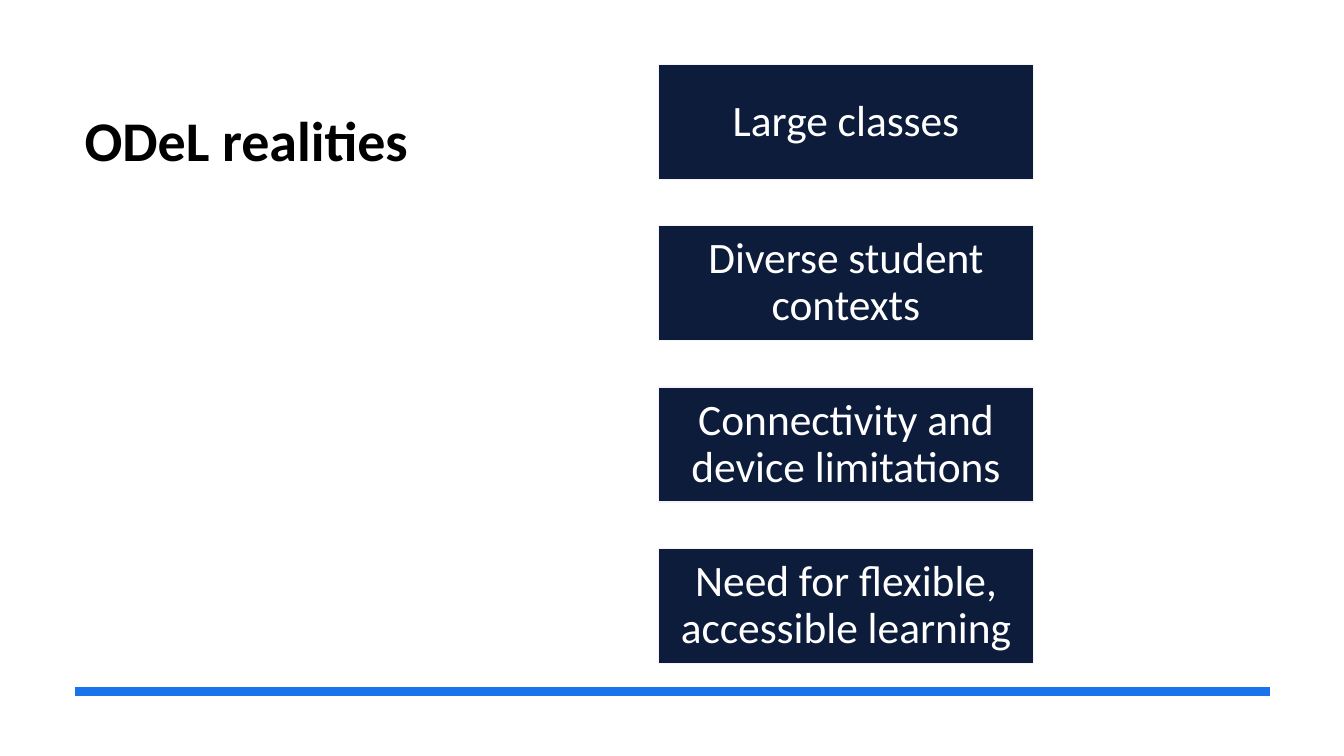
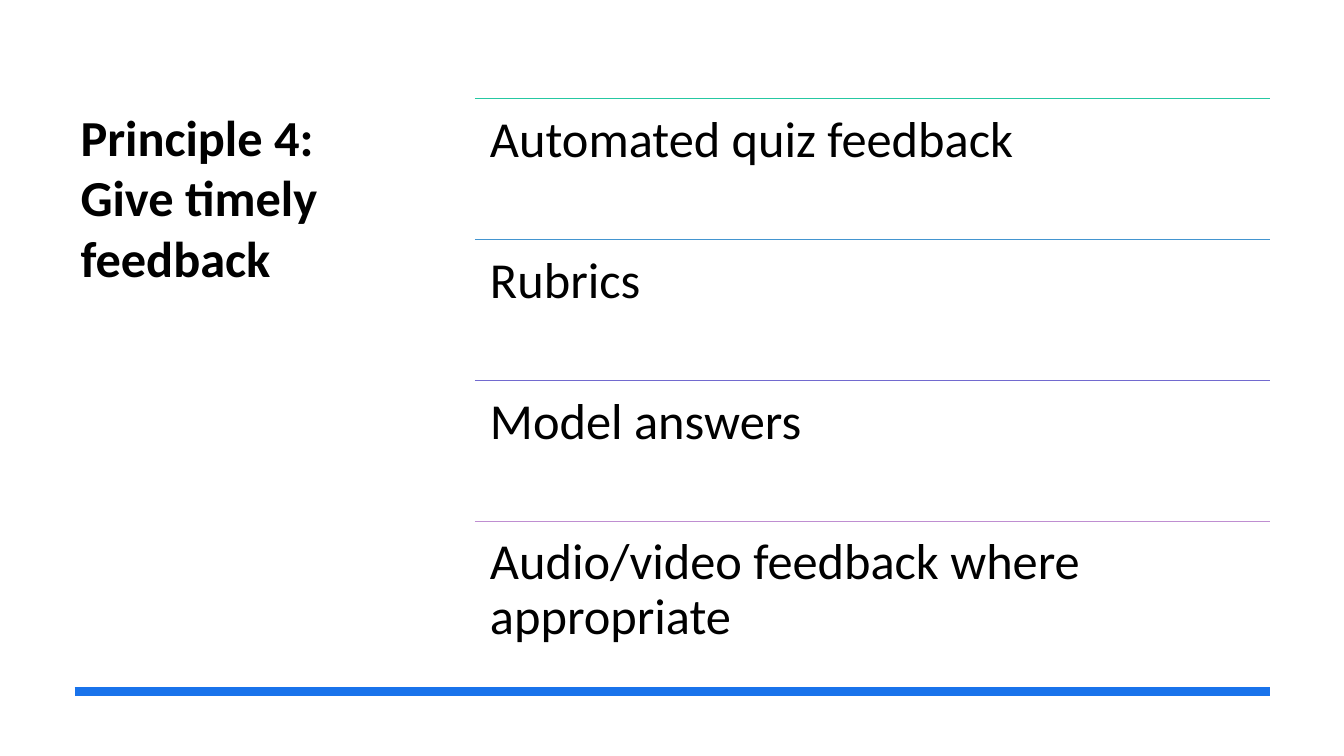
from lxml.etree import SubElement
from pptx import Presentation
from pptx.dml.color import RGBColor
from pptx.enum.shapes import MSO_CONNECTOR as CONN, MSO_SHAPE as SHAPE
from pptx.enum.text import MSO_ANCHOR as ANCHOR, PP_ALIGN as ALIGN
from pptx.oxml.ns import qn
from pptx.util import Inches, Pt

FONT = "Calibri"
COLORS = {
    "text": "000000", "white": "FFFFFF", "footer": "1973EB",
    "box": "0D1C3B", "box_edge": "F5F2F9",
    "green": "25C8A2", "blue": "4395D0", "violet": "726ACF", "mauve": "BF8ED1",
}
LEFT, RIGHT = 0.74, 12.6  # shared slide margins


def rgb(name):
    return RGBColor.from_string(COLORS[name])


def write(shape, text, size=36, color="text", bold=False, align=ALIGN.LEFT,
          anchor=ANCHOR.TOP, inset=(0.1, 0.05), spacing=1.0):
    """Fill a shape with one formatted paragraph."""
    tf = shape.text_frame
    tf.word_wrap = True
    tf.vertical_anchor = anchor
    tf.margin_left = tf.margin_right = Inches(inset[0])
    tf.margin_top = tf.margin_bottom = Inches(inset[1])
    p = tf.paragraphs[0]
    p.alignment, p.line_spacing = align, spacing
    r = p.add_run()
    r.text = text
    r.font.name, r.font.size, r.font.bold = FONT, Pt(size), bold
    r.font.color.rgb = rgb(color)


def add_text(s, box, text, **fmt):
    write(s.shapes.add_textbox(*map(Inches, box)), text, **fmt)


def add_rule(s, x1, x2, y, color, width):
    """Draw a horizontal line without a shadow."""
    line = s.shapes.add_connector(CONN.STRAIGHT, *map(Inches, (x1, y, x2, y)))
    line.line.color.rgb, line.line.width = rgb(color), Pt(width)
    SubElement(line._element.spPr, qn("a:effectLst"))


def add_base(prs, title, box, size):
    """Start a slide with its title and footer rule."""
    s = prs.slides.add_slide(prs.slide_layouts[6])
    add_text(s, box, title, size=size, bold=True)
    add_rule(s, LEFT, RIGHT, 6.86, "footer", 6)
    return s


def add_box_column(s, box, labels, gap):
    """Stack equal filled boxes down the given area."""
    x, y, w, h = box
    box_h = (h - gap * (len(labels) - 1)) / len(labels)
    for i, label in enumerate(labels):
        place = (x, y + i * (box_h + gap), w, box_h)
        sp = s.shapes.add_shape(SHAPE.RECTANGLE, *map(Inches, place))
        sp.shadow.inherit = False
        sp.fill.solid()
        sp.fill.fore_color.rgb = rgb("box")
        sp.line.color.rgb, sp.line.width = rgb("box_edge"), Pt(1)
        write(sp, label, size=31, color="white", align=ALIGN.CENTER,
              anchor=ANCHOR.MIDDLE, inset=(0.02, 0.02), spacing=0.9)


def add_ruled_list(s, box, rows):
    """Split the area into equal rows, each under a coloured rule."""
    x, y, w, h = box
    row_h = h / len(rows)
    for i, (label, color) in enumerate(rows):
        top = y + i * row_h
        add_rule(s, x, x + w, top, color, 1)
        add_text(s, (x, top, w, row_h), label, inset=(0.15, 0.15), spacing=0.9)


def main():
    prs = Presentation()
    prs.slide_width, prs.slide_height = Inches(13.33), Inches(7.5)

    # Realities: column of boxes
    s = add_base(prs, "ODeL realities", (LEFT, 1, 4.02, 4.55), 40)
    add_box_column(s, (6.53, 0.64, 3.72, 5.94), [
        "Large classes",
        "Diverse student contexts",
        "Connectivity and device limitations",
        "Need for flexible, accessible learning",
    ], gap=0.46)

    # Principle 4: ruled list
    s = add_base(prs, "Principle 4: Give timely feedback", (0.7, 1, 3.28, 4.55), 36)
    add_ruled_list(s, (4.71, 0.98, RIGHT - 4.71, 5.59), [
        ("Automated quiz feedback", "green"),
        ("Rubrics", "blue"),
        ("Model answers", "violet"),
        ("Audio/video feedback where appropriate", "mauve"),
    ])

    prs.save("out.pptx")


if __name__ == "__main__":
    main()
